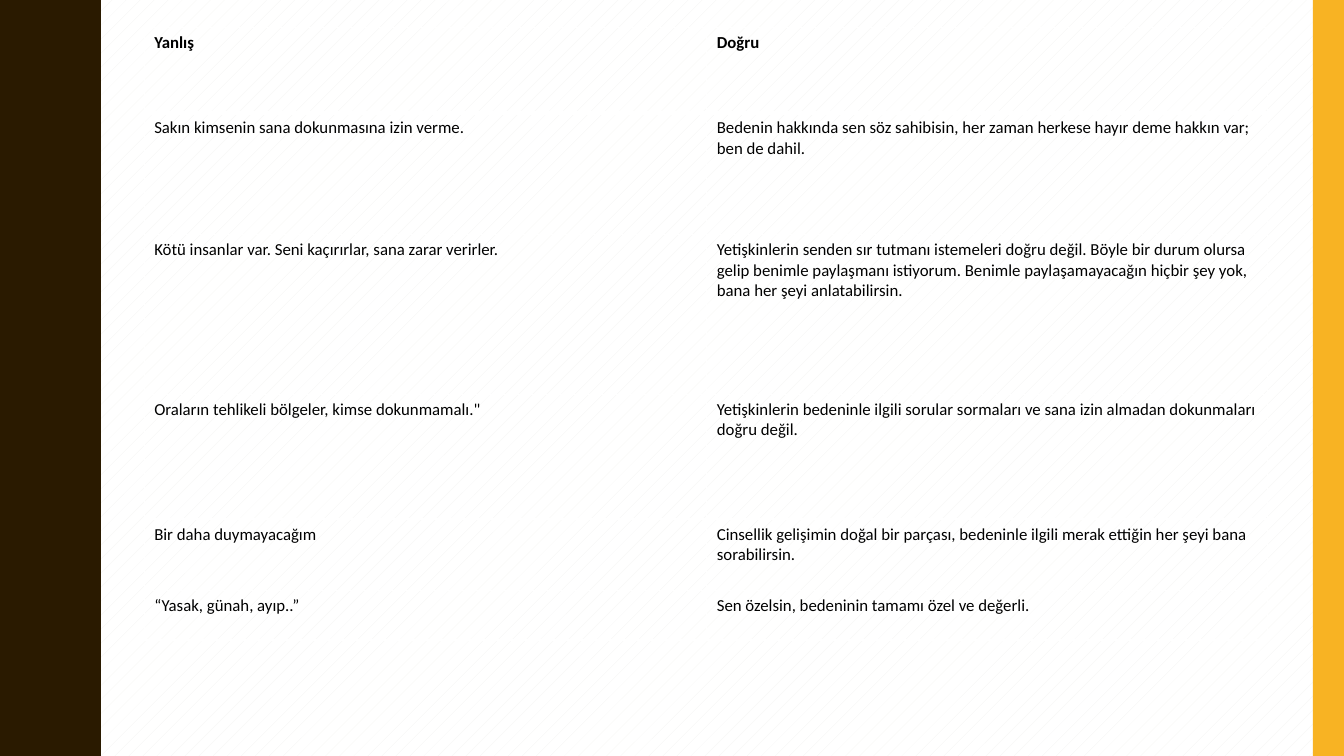
from lxml import etree
from pptx import Presentation
from pptx import util as u
from pptx.dml.color import RGBColor
from pptx.enum import dml, shapes
from pptx.oxml import ns

HEADER = ("Yanlış", "Doğru")
ADVICE = [
    ("Sakın kimsenin sana dokunmasına izin verme.",
     "Bedenin hakkında sen söz sahibisin, her zaman herkese hayır deme hakkın var; ben de dahil."),
    ("Kötü insanlar var. Seni kaçırırlar, sana zarar verirler.",
     "Yetişkinlerin senden sır tutmanı istemeleri doğru değil. Böyle bir durum olursa gelip "
     "benimle paylaşmanı istiyorum. Benimle paylaşamayacağın hiçbir şey yok, bana her şeyi "
     "anlatabilirsin."),
    ("Oraların tehlikeli bölgeler, kimse dokunmamalı.\"",
     "Yetişkinlerin bedeninle ilgili sorular sormaları ve sana izin almadan dokunmaları doğru değil."),
    ("Bir daha duymayacağım",
     "Cinsellik gelişimin doğal bir parçası, bedeninle ilgili merak ettiğin her şeyi bana sorabilirsin."),
    ("“Yasak, günah, ayıp..”",
     "Sen özelsin, bedeninin tamamı özel ve değerli."),
]
ROWS = [HEADER] + ADVICE
ROW_HEIGHTS = (0.85, 1.21, 1.58, 1.24, 0.71, 0.49)
COLUMN_WIDTHS = (5.58, 5.56)
TABLE_LEFT, TABLE_TOP = 1.43, 0.27

WIDTH, HEIGHT = 13.33, 7.5
STRIPE_WIDTH = 0.31
WAVE_PERIOD = HEIGHT / 5
HALF_WAVE = [
    (0.78, 0), (0.78, 0.07), (0.79, 0.14), (0.8, 0.2), (0.81, 0.25),
    (0.83, 0.29), (0.85, 0.33), (0.87, 0.38), (0.89, 0.42), (0.91, 0.46),
    (0.93, 0.5), (0.95, 0.55), (0.96, 0.61), (0.97, 0.68), (0.97, 0.75),
]

BROWN = RGBColor(0x2A, 0x1A, 0x00)
AMBER = RGBColor(0xF8, 0xB3, 0x23)
WHITE = RGBColor(0xFF, 0xFF, 0xFF)
PALE = RGBColor(0xF3, 0xF3, 0xF2)
BLACK = RGBColor(0, 0, 0)


def paint(shape, color):
    shape.shadow.inherit = False
    shape.fill.solid()
    shape.fill.fore_color.rgb = color
    shape.line.fill.background()


def add_wave(slide):
    full_wave = HALF_WAVE + [(x, WAVE_PERIOD - y) for x, y in HALF_WAVE[-2::-1]]
    edge = [(x, y + period * WAVE_PERIOD) for period in range(5) for x, y in full_wave]
    builder = slide.shapes.build_freeform(0, 0, scale=u.Inches(1))
    builder.add_line_segments(edge + [(0, HEIGHT)], close=True)
    paint(builder.convert_to_shape(), BROWN)


def add_borders(cell, bottom_width):
    properties = cell._tc.get_or_add_tcPr()
    for index, (side, width) in enumerate(
            [("lnL", 1), ("lnR", 1), ("lnT", 1), ("lnB", bottom_width)]):
        line = etree.Element(ns.qn("a:" + side), w=str(u.Pt(width)))
        fill = etree.SubElement(line, ns.qn("a:solidFill"))
        etree.SubElement(fill, ns.qn("a:srgbClr"), val=str(WHITE))
        properties.insert(index, line)


def add_advice_table(slide):
    frame = slide.shapes.add_table(
        len(ROWS), len(COLUMN_WIDTHS), u.Inches(TABLE_LEFT), u.Inches(TABLE_TOP),
        u.Inches(sum(COLUMN_WIDTHS)), u.Inches(sum(ROW_HEIGHTS)))
    table = frame.table
    table.horz_banding = False
    for column, width in zip(table.columns, COLUMN_WIDTHS):
        column.width = u.Inches(width)
    for row_index, (row, height) in enumerate(zip(table.rows, ROW_HEIGHTS)):
        row.height = u.Inches(height)
        is_header = row_index == 0
        for cell, wording in zip(row.cells, ROWS[row_index]):
            cell.fill.background()
            add_borders(cell, 3 if is_header else 1)
            run = cell.text_frame.paragraphs[0].add_run()
            run.text = wording
            run.font.name = "Calibri"
            run.font.size = u.Pt(12)
            run.font.bold = is_header
            run.font.color.rgb = BLACK


def main():
    presentation = Presentation()
    presentation.slide_width = u.Inches(WIDTH)
    presentation.slide_height = u.Inches(HEIGHT)
    slide = presentation.slides.add_slide(presentation.slide_layouts[6])
    background = slide.background.fill
    background.patterned()
    background.pattern = dml.MSO_PATTERN.PERCENT_5
    background.fore_color.rgb = PALE
    background.back_color.rgb = WHITE
    add_wave(slide)
    stripe = slide.shapes.add_shape(
        shapes.MSO_SHAPE.RECTANGLE, u.Inches(WIDTH - STRIPE_WIDTH), 0,
        u.Inches(STRIPE_WIDTH), u.Inches(HEIGHT))
    paint(stripe, AMBER)
    add_advice_table(slide)
    presentation.save("out.pptx")


if __name__ == "__main__":
    main()
